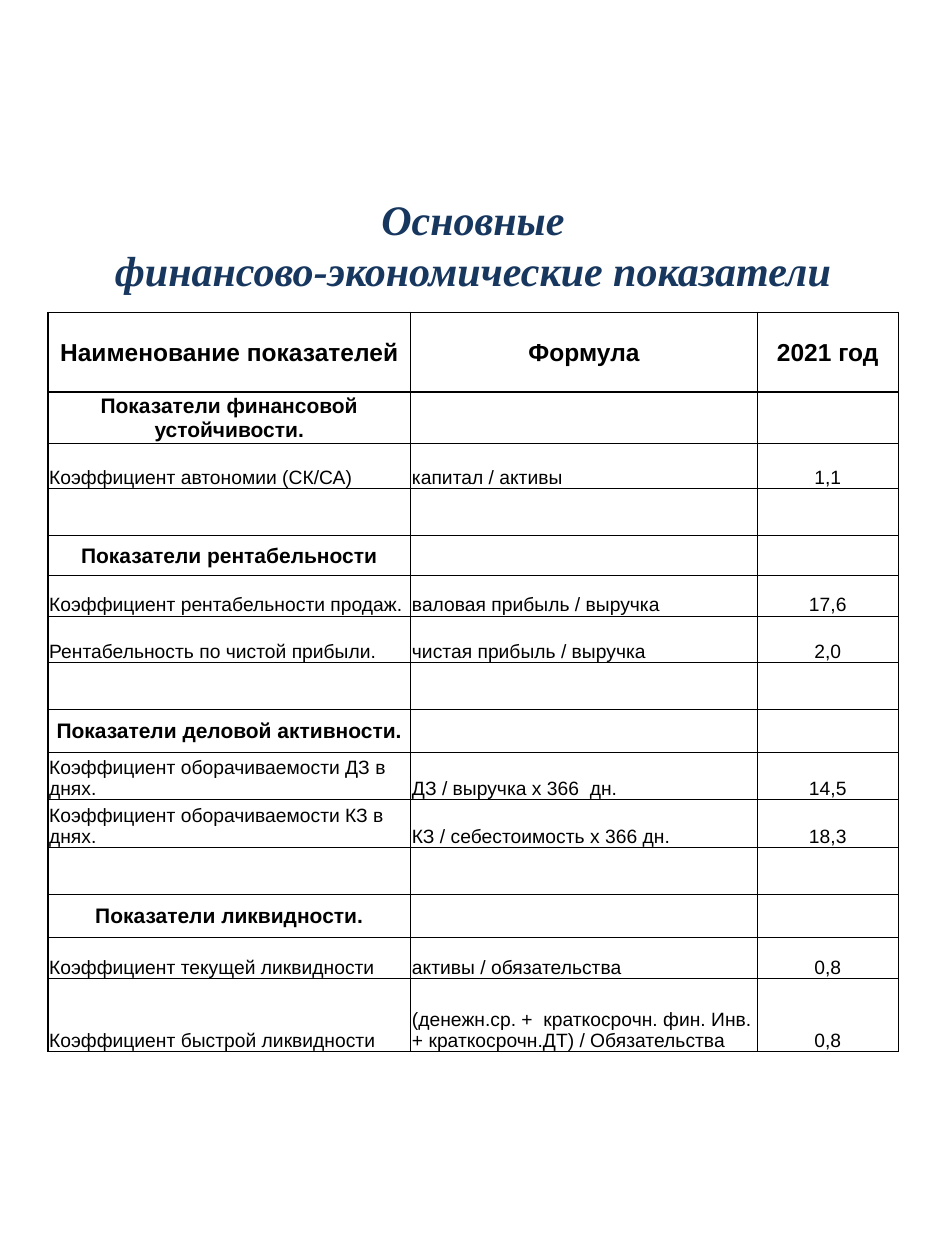
"""Build a slide with a table of the main financial and economic indicators."""
from lxml import etree
from pptx import Presentation
from pptx.dml.color import RGBColor
from pptx.enum import text
from pptx.oxml import ns
from pptx.util import Inches, Pt

NAVY = RGBColor(0x17, 0x37, 0x5E)
BLACK = RGBColor(0, 0, 0)
THIN, THICK = Pt(0.5), Pt(1)
COLUMN_WIDTHS = (2.88, 2.75, 1.12)
HEADER, SECTION, INDICATOR, GAP = "header", "section", "indicator", "gap"
HEADING_SIZES = {HEADER: 14, SECTION: 12}
INDICATOR_SIZE = 11
ROWS = (
    (HEADER, 0.63, ("Наименование показателей", "Формула", "2021 год")),
    (SECTION, 0.41, ("Показатели финансовой устойчивости.", "", "")),
    (INDICATOR, 0.36, ("Коэффициент автономии (СК/СА)", "капитал / активы", "1,1")),
    (GAP, 0.37, ("", "", "")),
    (SECTION, 0.32, ("Показатели рентабельности", "", "")),
    (INDICATOR, 0.32, ("Коэффициент рентабельности продаж.", "валовая прибыль / выручка", "17,6")),
    (INDICATOR, 0.37, ("Рентабельность по чистой прибыли.", "чистая прибыль / выручка", "2,0")),
    (GAP, 0.37, ("", "", "")),
    (SECTION, 0.34, ("Показатели деловой активности.", "", "")),
    (INDICATOR, 0.38, ("Коэффициент оборачиваемости ДЗ в днях.", "ДЗ / выручка х 366  дн.", "14,5")),
    (INDICATOR, 0.38, ("Коэффициент оборачиваемости КЗ в днях.", "КЗ / себестоимость х 366 дн.", "18,3")),
    (GAP, 0.37, ("", "", "")),
    (SECTION, 0.34, ("Показатели ликвидности.", "", "")),
    (INDICATOR, 0.33, ("Коэффициент текущей ликвидности", "активы / обязательства", "0,8")),
    (INDICATOR, 0.58, (
        "Коэффициент быстрой ликвидности",
        "(денежн.ср. +  краткосрочн. фин. Инв. + краткосрочн.ДТ) / Обязательства",
        "0,8",
    )),
)


def style_runs(paragraph, typeface, size, color, bold, italic=False):
    for run in paragraph.runs:
        font = run.font
        font.name, font.size = typeface, Pt(size)
        font.bold, font.italic = bold, italic
        font.color.rgb = color


def add_title(slide):
    title = slide.shapes.add_textbox(Inches(0.49), Inches(1.49), Inches(6.61), Inches(0.91))
    frame = title.text_frame
    frame.word_wrap = True
    frame.auto_size = text.MSO_AUTO_SIZE.SHAPE_TO_FIT_TEXT
    heading = frame.paragraphs[0]
    heading.text = "Основные \vфинансово-экономические показатели "
    heading.alignment = text.PP_ALIGN.CENTER
    style_runs(heading, "Times New Roman", 24, NAVY, True, True)


def set_borders(cell, **widths):
    properties = cell._tc.get_or_add_tcPr()
    for side in "LRTB":
        line = etree.SubElement(properties, ns.qn(f"a:ln{side}"), w=str(widths[side]))
        fill = etree.SubElement(line, ns.qn("a:solidFill"))
        etree.SubElement(fill, ns.qn("a:srgbClr"), val=str(BLACK))


def fill_cell(cell, wording, kind, is_value):
    is_heading = kind in HEADING_SIZES
    cell.margin_left = cell.margin_right = cell.margin_top = Inches(0.01)
    cell.margin_bottom = 0
    cell.vertical_anchor = text.MSO_ANCHOR.MIDDLE if is_heading else text.MSO_ANCHOR.BOTTOM
    cell.fill.background()
    entry = cell.text_frame.paragraphs[0]
    entry.text = wording
    entry.alignment = text.PP_ALIGN.CENTER if is_heading or is_value else text.PP_ALIGN.LEFT
    style_runs(entry, "Arial", HEADING_SIZES.get(kind, INDICATOR_SIZE), BLACK, is_heading)


def add_indicators(slide):
    last_row, last_column = len(ROWS) - 1, len(COLUMN_WIDTHS) - 1
    height = sum(row_height for _, row_height, _ in ROWS)
    indicators = slide.shapes.add_table(
        len(ROWS), len(COLUMN_WIDTHS),
        Inches(0.38), Inches(2.48), Inches(sum(COLUMN_WIDTHS)), Inches(height),
    ).table
    indicators.first_row = indicators.horz_banding = False
    for column, width in zip(indicators.columns, COLUMN_WIDTHS):
        column.width = Inches(width)
    for r, (kind, row_height, wordings) in enumerate(ROWS):
        indicators.rows[r].height = Inches(row_height)
        for c, wording in enumerate(wordings):
            cell = indicators.cell(r, c)
            set_borders(
                cell,
                L=THICK if c == 0 else THIN,
                R=THICK if c == last_column else THIN,
                T=THICK if r <= 1 else THIN,
                B=THICK if r in (0, last_row) else THIN,
            )
            fill_cell(cell, wording, kind, c == last_column)


def main():
    deck = Presentation()
    deck.slide_width, deck.slide_height = Inches(7.5), Inches(10)
    slide = deck.slides.add_slide(deck.slide_layouts[6])
    add_title(slide)
    add_indicators(slide)
    deck.save("out.pptx")


if __name__ == "__main__":
    main()
